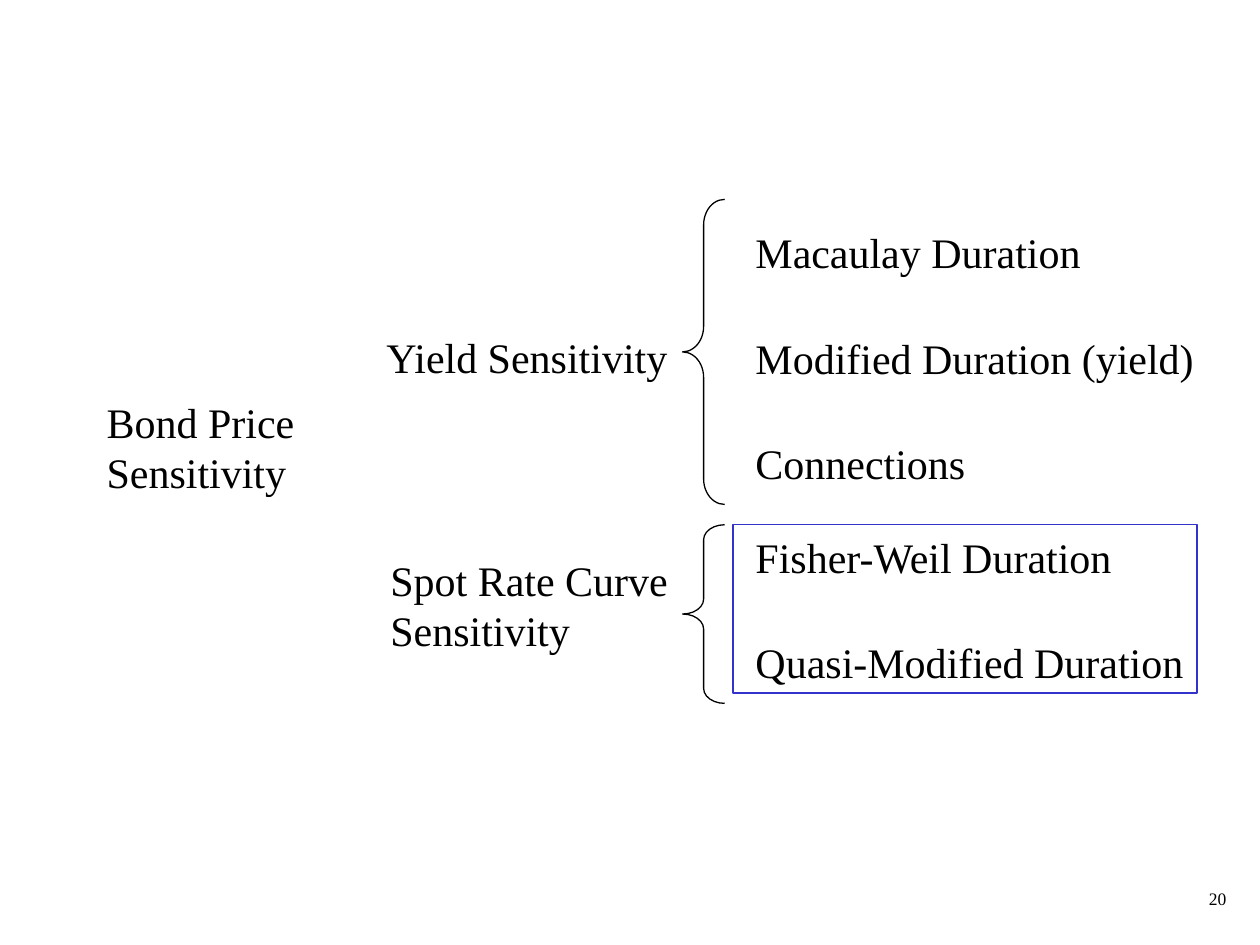
from dataclasses import dataclass

from pptx import Presentation
from pptx import util as u
from pptx.dml.color import RGBColor
from pptx.enum import shapes, text


@dataclass(frozen=True)
class Theme:
    font: str = "Times New Roman"
    ink: RGBColor = RGBColor(0, 0, 0)
    accent: RGBColor = RGBColor(0x33, 0x33, 0xCC)
    body: u.Pt = u.Pt(24)
    leading: u.Pt = u.Pt(28.8)
    small: u.Pt = u.Pt(10)
    line: u.Pt = u.Pt(0.75)


THEME = Theme()
TERM_STEP = 2.12  # cm between the terms of a branch
LABEL_HEIGHT = 1.27


def add_label(page, left, top, width, height, words):
    """Place body text, with \\v as the line break."""
    box = page.shapes.add_textbox(*map(u.Cm, (left, top, width, height)))
    box.text_frame.word_wrap = False
    para = box.text_frame.paragraphs[0]
    para.text = words
    para.line_spacing = THEME.leading
    para.font.name = THEME.font
    para.font.size = THEME.body
    para.font.color.rgb = THEME.ink
    return box


def add_outline(page, kind, left, top, width, height, color):
    shape = page.shapes.add_shape(kind, *map(u.Cm, (left, top, width, height)))
    shape.shadow.inherit = False
    shape.fill.background()
    shape.line.color.rgb = color
    shape.line.width = THEME.line
    return shape


def add_branch(page, left, top, height, curl, label, label_box, terms, first_term):
    """Draw a brace with its label on the left and its terms on the right.

    label_box and first_term are offsets from the brace's top left corner.
    """
    brace = add_outline(page, shapes.MSO_SHAPE.LEFT_BRACE,
                        left, top, 0.85, height, THEME.ink)
    brace.adjustments[0] = curl
    brace.adjustments[1] = 0.5
    dx, dy, label_width, label_height = label_box
    add_label(page, left + dx, top + dy, label_width, label_height, label)
    for row, (term, width) in enumerate(terms):
        add_label(page, left + 1.22, top + first_term + row * TERM_STEP,
                  width, LABEL_HEIGHT, term)


def add_page_number(page, left, top, width, height, number):
    box = add_label(page, left, top, width, height, number)
    box.text_frame.word_wrap = True
    para = box.text_frame.paragraphs[0]
    para.alignment = text.PP_ALIGN.RIGHT
    para.line_spacing = 1.0
    para.font.size = THEME.small


def main():
    deck = Presentation()
    deck.slide_width, deck.slide_height = u.Cm(25.4), u.Cm(19.05)
    page = deck.slides.add_slide(deck.slide_layouts[6])

    # Root of the tree
    add_label(page, 1.9, 7.87, 4.5, 2.29, "Bond Price \vSensitivity")

    # Yield branch
    add_branch(page, 13.76, 4.02, 6.15, 0.604,
               "Yield Sensitivity", (-6.22, 2.54, 6.22, LABEL_HEIGHT),
               [("Macaulay Duration", 7.06),
                ("Modified Duration (yield)", 9.35),
                ("Connections", 4.75)], 0.43)

    # Spot rate branch, with its terms framed
    add_outline(page, shapes.MSO_SHAPE.RECTANGLE,
                14.78, 10.58, 9.35, 3.39, THEME.accent)
    add_branch(page, 13.76, 10.58, 3.6, 0.354,
               "Spot Rate Curve \vSensitivity", (-6.14, 0.47, 6.32, 2.29),
               [("Fisher-Weil Duration", 7.77),
                ("Quasi-Modified Duration", 9.14)], 0)

    # Footer
    add_page_number(page, 19.69, 17.78, 5.28, 0.84, "20")

    deck.save("out.pptx")


if __name__ == "__main__":
    main()
